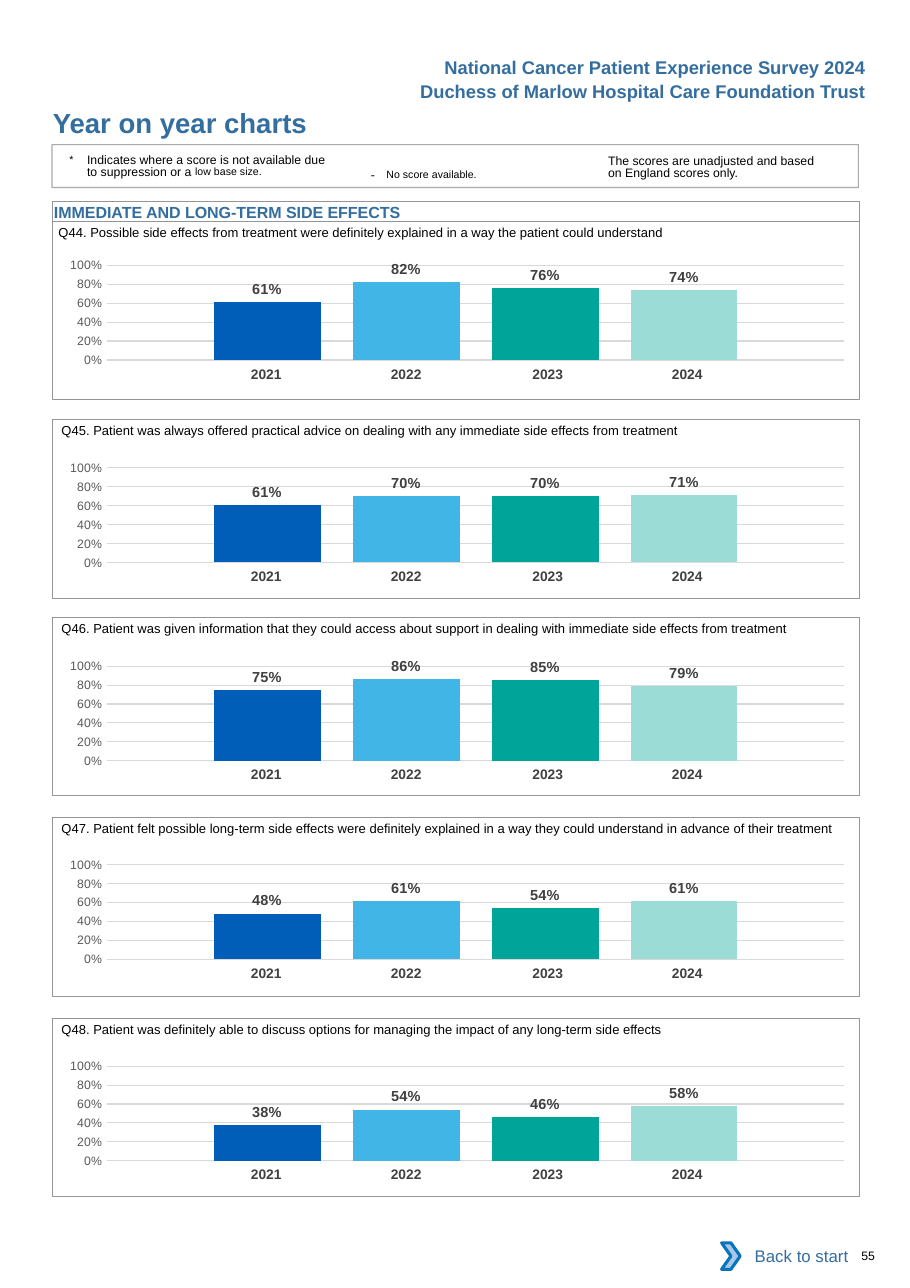
from dataclasses import dataclass, field
from typing import Any

from lxml.etree import SubElement
from pptx import Presentation
from pptx.chart.data import CategoryChartData
from pptx.dml.color import RGBColor as Color
from pptx.enum.chart import XL_CHART_TYPE as ChartType, XL_LABEL_POSITION as LabelPosition, XL_TICK_MARK as Tick
from pptx.enum.shapes import MSO_SHAPE as Preset
from pptx.enum.text import MSO_ANCHOR as Anchor, MSO_AUTO_SIZE as AutoSize, PP_ALIGN as Align
from pptx.oxml import parse_xml
from pptx.oxml.ns import nsdecls, qn
from pptx.shapes.autoshape import Shape
from pptx.slide import Slide
from pptx.util import Pt


def rgb(code: str) -> Color:
    return Color.from_string(code)


@dataclass(frozen=True)
class Theme:
    font: str = "Arial"
    chart_font: str = "Calibri"
    black: Color = rgb("000000")
    white: Color = rgb("FFFFFF")
    heading: Color = rgb("336E9F")
    border: Color = rgb("939598")
    year: Color = rgb("414042")
    label: Color = rgb("404040")
    axis: Color = rgb("595959")
    grid: Color = rgb("D9D9D9")
    arrow_fill: Color = rgb("A8C7E9")
    arrow_line: Color = rgb("0A74BB")
    bars: tuple[Color, ...] = (rgb("005EB8"), rgb("41B6E6"), rgb("00A499"), rgb("9CDCD7"))
    title_size: float = 18
    header_size: float = 12
    link_size: float = 11
    section_size: float = 10.5
    chart_size: float = 10
    label_size: float = 9.5
    year_size: float = 9
    question_size: float = 8.5
    note_size: float = 8
    raised_size: float = 12


@dataclass(frozen=True)
class Area:
    left: float
    top: float
    width: float
    height: float

    def points(self) -> tuple[Pt, Pt, Pt, Pt]:
        return Pt(self.left), Pt(self.top), Pt(self.width), Pt(self.height)


@dataclass(frozen=True)
class Span:
    text: str
    size: float
    color: Color = Theme.black
    bold: bool = False
    extra: dict[str, str] = field(default_factory=dict)


@dataclass(frozen=True)
class Panel:
    question: str
    scores: tuple[float, ...]
    box_top: float
    chart_top: float
    text_left: float = 40.2


THEME = Theme()
YEARS = ("2021", "2022", "2023", "2024")
YEAR_WIDTHS = (91.5, 91.5, 96.5, 91.5)
YEAR_RIGHT_MARGINS = (0, 0, 3, 8.6)
BOX_LEFT, BOX_WIDTH, BOX_HEIGHT = 34.5, 527, 116.6
PLOT_LAYOUT = {"x": 0.079, "y": 0.145, "w": 0.915, "h": 0.666}
NO_STYLE_TABLE = "{2D5ABB26-0587-4C30-8999-92F81FD0307C}"
PANELS = (
    Panel("Q44. Possible side effects from treatment were definitely explained in a way the patient could understand",
          (0.61, 0.82, 0.76, 0.74), 144.7, 160, 38.2),
    Panel("Q45. Patient was always offered practical advice on dealing with any immediate side effects from treatment",
          (0.61, 0.70, 0.70, 0.71), 274.3, 292.3),
    Panel("Q46. Patient was given information that they could access about support in dealing with "
          "immediate side effects from treatment", (0.75, 0.86, 0.85, 0.79), 403.4, 421.9),
    Panel("Q47. Patient felt possible long-term side effects were definitely explained in a way they "
          "could understand in advance of their treatment", (0.48, 0.61, 0.54, 0.61), 534.3, 551.5),
    Panel("Q48. Patient was definitely able to discuss options for managing the impact of any long-term side effects",
          (0.38, 0.54, 0.46, 0.58), 665.3, 683.3),
)


def apply(target: Any, **values: Any) -> None:
    for name, value in values.items():
        setattr(target, name, value)


def style_font(font: Any, size: float, color: Color, bold: bool = False, name: str = THEME.font) -> None:
    apply(font, size=Pt(size), bold=bold, name=name)
    font.color.rgb = color


def write(shape: Any, *spans: Span, margins: tuple[float, ...] = (0, 0, 0, 0),
          anchor: Anchor = Anchor.TOP, **para_format: Any) -> None:
    frame = shape.text_frame
    sides = ("margin_left", "margin_top", "margin_right", "margin_bottom")
    apply(frame, word_wrap=True, auto_size=AutoSize.NONE, vertical_anchor=anchor,
          **{side: Pt(value) for side, value in zip(sides, margins)})
    para = frame.paragraphs[0]
    apply(para, **{"alignment": Align.LEFT, **para_format})
    for span in spans:
        run = para.add_run()
        run.text = span.text
        style_font(run.font, span.size, span.color, span.bold)
        for name, value in span.extra.items():
            run._r.get_or_add_rPr().set(name, value)


def add_text(page: Slide, area: Area, *spans: Span, **options: Any) -> Shape:
    box = page.shapes.add_textbox(*area.points())
    write(box, *spans, **options)
    return box


def add_box(page: Slide, area: Area, fill: Color | None = None, line: Color | None = THEME.border,
            weight: float = 0.5, preset: Preset = Preset.RECTANGLE) -> Shape:
    box = page.shapes.add_shape(preset, *area.points())
    box.shadow.inherit = False
    for part, color in ((box.fill, fill), (box.line.fill, line)):
        if color is None:
            part.background()
        else:
            part.solid()
            part.fore_color.rgb = color
    if line is not None:
        box.line.width = Pt(weight)
    return box


def add_scores(page: Slide, panel: Panel) -> None:
    data = CategoryChartData(number_format="0%")
    data.categories = ["1"]
    for number, score in enumerate(panel.scores, 1):
        data.add_series(f"Series {number}", [score])
    area = Area(28.1, panel.chart_top, BOX_WIDTH, 92.9)
    chart = page.shapes.add_chart(ChartType.COLUMN_CLUSTERED, *area.points(), data).chart
    apply(chart, has_title=False, has_legend=False)
    style_font(chart.font, THEME.chart_size, THEME.black, name=THEME.chart_font)
    chart.category_axis.visible = False
    axis = chart.value_axis
    apply(axis, minimum_scale=0, maximum_scale=1, major_unit=0.2, has_major_gridlines=True,
          major_tick_mark=Tick.NONE, minor_tick_mark=Tick.NONE)
    apply(axis.tick_labels, number_format="0%", number_format_is_linked=False)
    style_font(axis.tick_labels.font, THEME.note_size, THEME.axis)
    axis.format.line.fill.background()
    grid_line = axis.major_gridlines.format.line
    grid_line.color.rgb = THEME.grid
    grid_line.width = Pt(0.75)
    plot = chart.plots[0]
    apply(plot, gap_width=200, overlap=-30, vary_by_categories=False)
    for series, color in zip(plot.series, THEME.bars):
        series.format.fill.solid()
        series.format.fill.fore_color.rgb = color
        apply(series.data_labels, show_value=True, position=LabelPosition.OUTSIDE_END,
              number_format="0%", number_format_is_linked=False)
        style_font(series.data_labels.font, THEME.label_size, THEME.label, True)
    plot_area = next(chart.element.iter(qn("c:plotArea")))
    for layout in plot_area.findall(qn("c:layout")):
        plot_area.remove(layout)
    sizes = "".join(f'<c:{key} val="{value}"/>' for key, value in PLOT_LAYOUT.items())
    plot_area.insert(0, parse_xml(
        f'<c:layout {nsdecls("c")}><c:manualLayout><c:layoutTarget val="inner"/><c:xMode val="edge"/>'
        f'<c:yMode val="edge"/>{sizes}</c:manualLayout></c:layout>'))


def add_years(page: Slide, top: float) -> None:
    area = Area(124.6, top, sum(YEAR_WIDTHS), 19.4)
    frame = page.shapes.add_table(1, len(YEARS), *area.points())
    table = frame.table
    apply(table, first_row=False, horz_banding=False)
    next(frame.element.iter(qn("a:tableStyleId"))).text = NO_STYLE_TABLE
    for index, (year, width, margin) in enumerate(zip(YEARS, YEAR_WIDTHS, YEAR_RIGHT_MARGINS)):
        table.columns[index].width = Pt(width)
        cell = table.cell(0, index)
        cell.fill.background()
        apply(cell, margin_left=Pt(7.2), margin_right=Pt(margin), margin_top=Pt(3.6), margin_bottom=Pt(3.6))
        para = cell.text_frame.paragraphs[0]
        para.alignment = Align.CENTER
        span = para.add_run()
        span.text = year
        style_font(span.font, THEME.year_size, THEME.year, True)


def add_panel(page: Slide, panel: Panel) -> None:
    add_scores(page, panel)
    add_years(page, panel.chart_top + 76)
    add_box(page, Area(BOX_LEFT, panel.box_top, BOX_WIDTH, BOX_HEIGHT))
    add_text(page, Area(panel.text_left, panel.box_top - 4.4, 520, 17.3),
             Span(panel.question, THEME.question_size), margins=(0, 6.5, 0, 0))


def add_legend(page: Slide) -> None:
    border = add_box(page, Area(34, 94.5, BOX_WIDTH, 28.1), weight=0.75)
    SubElement(next(border.element.iter(qn("a:srgbClr"))), qn("a:alpha")).set("val", "80000")
    small, raised = THEME.note_size, THEME.raised_size
    note = add_text(page, Area(45.4, 99.4, 171, 22), Span("*\t", raised, extra={"baseline": "3000"}),
                    Span("Indicates where a score is not available due to suppression or a ", small),
                    Span("low base size.", raised, extra={"baseline": "7000"}),
                    margins=(0, 2.2, 0, 0), line_spacing=Pt(8.1))
    apply_indent = next(note.element.iter(qn("a:pPr"))).set
    apply_indent("marL", str(Pt(11.5)))
    apply_indent("indent", str(-Pt(11.5)))
    add_text(page, Area(235.4, 101.5, 131.8, 17.3), Span("- ", small, extra={"spc": "260"}),
             Span("No score available.", raised, extra={"baseline": "3000"}), margins=(7.2, 3.6, 7.2, 3.6))
    add_text(page, Area(397.4, 99.4, 144.7, 19.4),
             Span("The scores are unadjusted and based on England scores only.", small),
             margins=(0, 2.2, 0, 0), line_spacing=Pt(8.1))


def main() -> None:
    deck = Presentation()
    apply(deck, slide_width=Pt(594.72), slide_height=Pt(841.68))
    page = deck.slides.add_slide(deck.slide_layouts[5])
    title = page.shapes.title
    apply(title, **dict(zip(("left", "top", "width", "height"), Area(34.5, 69.1, 324, 21.6).points())))
    write(title, Span("Year on year charts", THEME.title_size, THEME.heading, True))
    headers = ("National Cancer Patient Experience Survey 2024", "Duchess of Marlow Hospital Care Foundation Trust")
    for row, header in enumerate(headers):
        add_text(page, Area(223, 33.1 + 16 * row, 350, 21.6), Span(header, THEME.header_size, THEME.heading, True),
                 margins=(7.2, 3.6, 7.2, 3.6), alignment=Align.RIGHT)
    add_legend(page)
    section = add_box(page, Area(BOX_LEFT, 131.8, BOX_WIDTH, 12.9))
    write(section, Span("IMMEDIATE AND LONG-TERM SIDE EFFECTS", THEME.section_size, THEME.heading, True),
          margins=(0.7, 0.7, 0, 0))
    for panel in PANELS:
        add_panel(page, panel)
    link = add_box(page, Area(476.6, 805.7, 85, 30.2), THEME.white, None)
    write(link, Span("Back to start", THEME.link_size, THEME.heading), margins=(7.2, 3.6, 7.2, 3.6),
          anchor=Anchor.MIDDLE, alignment=Align.RIGHT)
    add_box(page, Area(471.6, 812.2, 12.2, 17.3), THEME.arrow_fill, THEME.arrow_line, 2, Preset.CHEVRON)
    add_text(page, Area(555.8, 815.8, 36.7, 9.4), Span("55", THEME.note_size), margins=(7.2, 0, 0, 0))
    deck.save("out.pptx")


if __name__ == "__main__":
    main()
